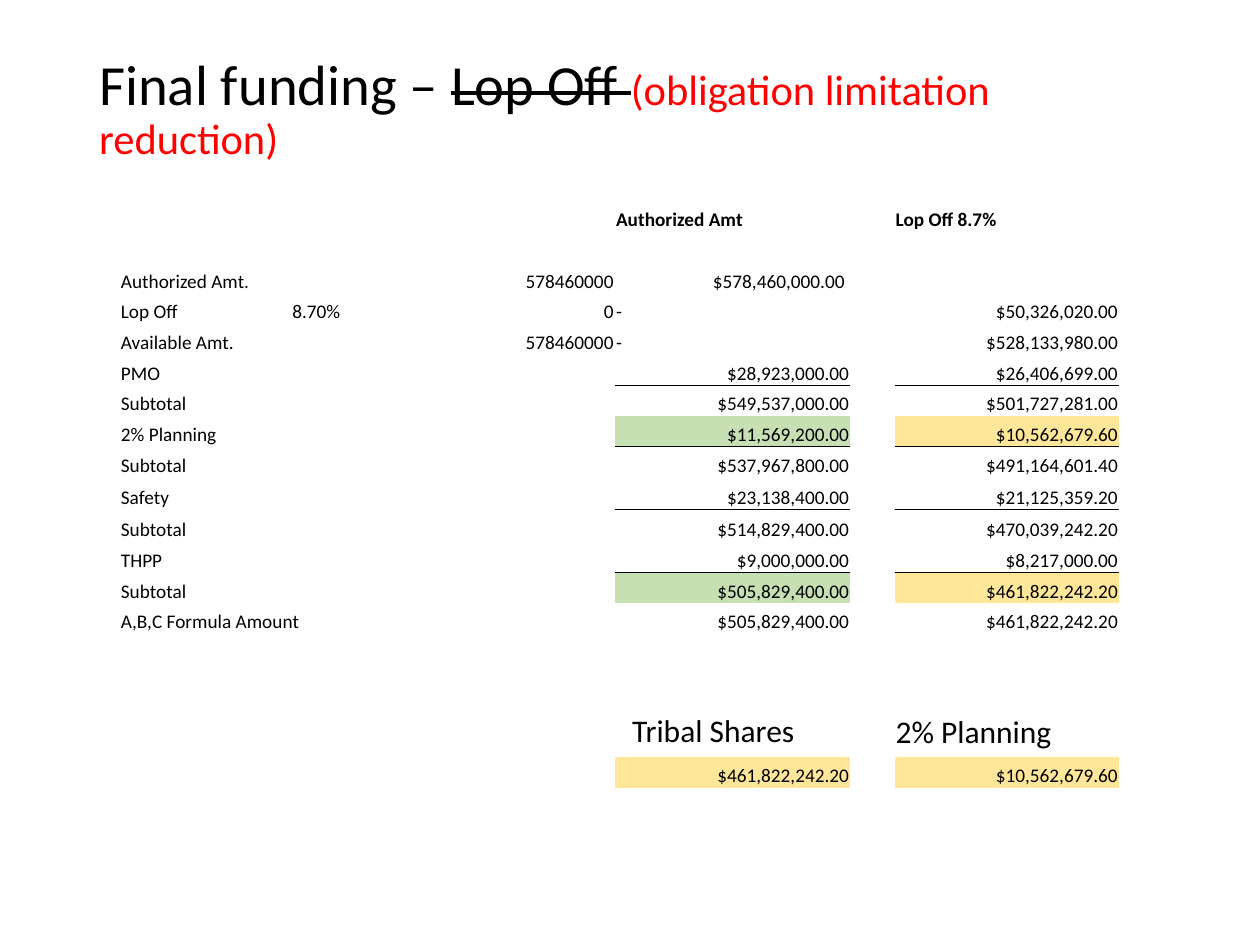
from lxml import etree
from pptx import Presentation
from pptx import util as u
from pptx.dml.color import RGBColor
from pptx.enum import text
from pptx.oxml import ns

Pt = u.Pt
FONT = "Calibri"
COLOURS = {"ink": "000000", "red": "FF0000", "green": "C6E0B4", "yellow": "FFE699"}
COLUMN_WIDTHS = [63.4, 63.4, 50.4, 105.8, 134.6, 25.2, 128.4]
ROW_HEIGHT, TALL_HEIGHT, HEADER_HEIGHT = 17.55, 18.4, 20.9
ROW_COUNT = 19
AMOUNT_COLUMNS = (4, 6)
FUNDING = {
    0: ["", "", "", "", "Authorized Amt", "", "Lop Off 8.7%"],
    2: ["Authorized Amt.", "", "", "578460000", "$578,460,000.00 ", "", ""],
    3: ["Lop Off", "8.70%", "", "0", "-", "", "$50,326,020.00"],
    4: ["Available Amt.", "", "", "578460000", "-", "", "$528,133,980.00"],
    5: ["PMO", "", "", "", "$28,923,000.00", "", "$26,406,699.00"],
    6: ["Subtotal", "", "", "", "$549,537,000.00", "", "$501,727,281.00"],
    7: ["2% Planning", "", "", "", "$11,569,200.00", "", "$10,562,679.60"],
    8: ["Subtotal", "", "", "", "$537,967,800.00", "", "$491,164,601.40"],
    9: ["Safety", "", "", "", "$23,138,400.00", "", "$21,125,359.20"],
    10: ["Subtotal", "", "", "", "$514,829,400.00", "", "$470,039,242.20"],
    11: ["THPP", "", "", "", "$9,000,000.00", "", "$8,217,000.00"],
    12: ["Subtotal", "", "", "", "$505,829,400.00", "", "$461,822,242.20"],
    13: ["A,B,C Formula Amount", "", "", "", "$505,829,400.00", "", "$461,822,242.20"],
    18: ["", "", "", "", "$461,822,242.20", "", "$10,562,679.60"],
}
MERGED_TO = {2: 1, 4: 1, 7: 1, 13: 2}
RULED_ROWS = (5, 7, 9, 11)
TALL_ROWS = (9, 10)
FILLS = {7: ("green", "yellow"), 12: ("green", "yellow"), 18: ("yellow", "yellow")}


def style_font(font, size, colour="ink", bold=False):
    """Set the face, size, colour and weight of a font."""
    font.name, font.size, font.bold = FONT, Pt(size), bold
    font.color.rgb = RGBColor.from_string(COLOURS[colour])


def add_title(page):
    """Fill the title placeholder with its three differently styled runs."""
    box = page.shapes.title
    box.left, box.top, box.width, box.height = Pt(49.5), Pt(28.8), Pt(620.6), Pt(68.4)
    frame = box.text_frame
    frame.auto_size = text.MSO_AUTO_SIZE.NONE
    frame.vertical_anchor = text.MSO_ANCHOR.MIDDLE
    para = frame.paragraphs[0]
    para.alignment, para.line_spacing = text.PP_ALIGN.LEFT, 0.9
    for words, size, colour, strike in (
        ("Final funding – ", 32.4, "ink", "noStrike"),
        ("Lop Off ", 32.4, "ink", "sngStrike"),
        ("(obligation limitation reduction)", 24.3, "red", "noStrike"),
    ):
        span = para.add_run()
        span.text = words
        style_font(span.font, size, colour)
        span.font._element.set("strike", strike)


def add_bottom_rule(cell):
    """Draw a thin line under a cell."""
    rule = etree.Element(ns.qn("a:lnB"), w=str(Pt(0.5)))
    fill = etree.SubElement(rule, ns.qn("a:solidFill"))
    etree.SubElement(fill, ns.qn("a:srgbClr"), val=COLOURS["ink"])
    cell._tc.get_or_add_tcPr().insert(0, rule)


def fill_cell(cell, words, right, bold):
    """Write one table cell at the foot of its row."""
    cell.margin_left = cell.margin_right = cell.margin_top = Pt(0.7)
    cell.margin_bottom = 0
    cell.vertical_anchor = text.MSO_ANCHOR.BOTTOM
    cell.fill.background()
    para = cell.text_frame.paragraphs[0]
    if words:
        para.text = words
    para.alignment = text.PP_ALIGN.RIGHT if right else text.PP_ALIGN.LEFT
    style_font(para.font, 11, bold=bold)


def row_height(row):
    """Return the height of a table row in points."""
    if row == 0:
        return HEADER_HEIGHT
    return TALL_HEIGHT if row in TALL_ROWS else ROW_HEIGHT


def add_funding_table(page):
    """Add the funding table with its rules and highlights."""
    heights = [row_height(row) for row in range(ROW_COUNT)]
    frame = page.shapes.add_table(ROW_COUNT, len(COLUMN_WIDTHS), Pt(68.4), Pt(111.6),
                                  Pt(sum(COLUMN_WIDTHS)), Pt(sum(heights)))
    table = frame.table
    table.first_row = table.horz_banding = False
    style = table._tbl.tblPr.find(ns.qn("a:tableStyleId"))
    style.text = "{2D5ABB26-0587-4C30-8999-92F81FD0307C}"
    for column, width in zip(table.columns, COLUMN_WIDTHS):
        column.width = Pt(width)
    for row, height in enumerate(heights):
        table.rows[row].height = Pt(height)
        for column, words in enumerate(FUNDING.get(row, [""] * len(COLUMN_WIDTHS))):
            right = row > 0 and column > 0 and words != "-"
            fill_cell(table.cell(row, column), words, right, row == 0)
    for row, last in MERGED_TO.items():
        table.cell(row, 0).merge(table.cell(row, last))
    for row, names in FILLS.items():
        for column, name in zip(AMOUNT_COLUMNS, names):
            fill = table.cell(row, column).fill
            fill.solid()
            fill.fore_color.rgb = RGBColor.from_string(COLOURS[name])
    for row in RULED_ROWS:
        for column in AMOUNT_COLUMNS:
            add_bottom_rule(table.cell(row, column))


def add_label(page, words, left, top):
    """Add a heading above one of the closing amounts."""
    box = page.shapes.add_textbox(Pt(left), Pt(top), Pt(136), Pt(29))
    box.text_frame.word_wrap = True
    para = box.text_frame.paragraphs[0]
    para.text = words
    style_font(para.font, 18)


def main():
    """Build and save the deck."""
    deck = Presentation()
    deck.slide_width, deck.slide_height = Pt(720), Pt(540)
    page = deck.slides.add_slide(deck.slide_layouts.get_by_name("Title Only"))
    add_title(page)
    add_funding_table(page)
    add_label(page, "Tribal Shares", 354.2, 402.5)
    add_label(page, "2% Planning", 504.7, 403.2)
    deck.save("out.pptx")


if __name__ == "__main__":
    main()
